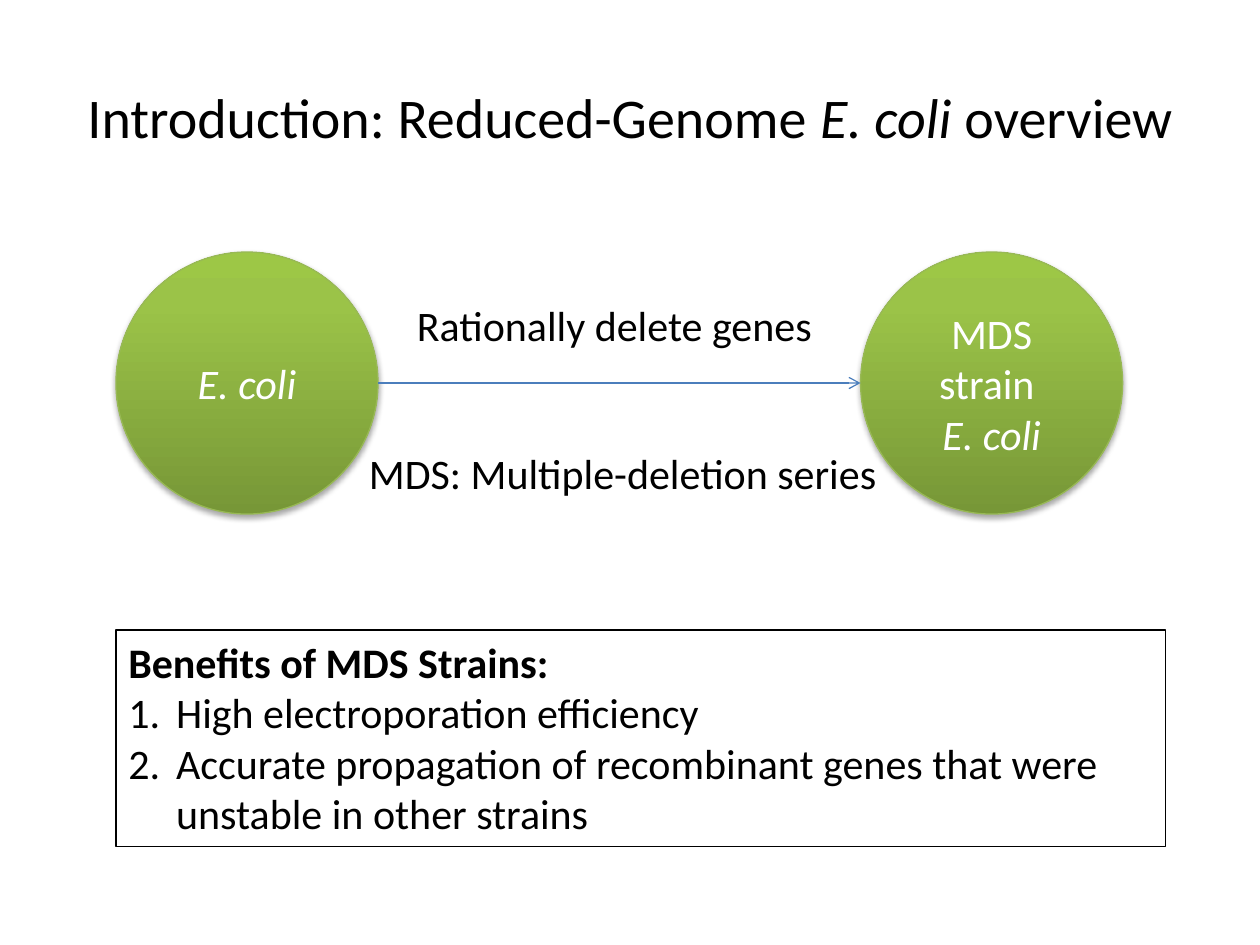
"""Build the overview slide on reduced-genome E. coli."""
from copy import deepcopy

from pptx import Presentation
from pptx.dml.color import RGBColor
from pptx.enum.shapes import MSO_CONNECTOR, MSO_SHAPE
from pptx.enum.text import MSO_ANCHOR, PP_ALIGN
from pptx.oxml import parse_xml
from pptx.oxml.ns import nsdecls, qn
from pptx.util import Inches, Pt

BLACK = RGBColor(0x00, 0x00, 0x00)
WHITE = RGBColor(0xFF, 0xFF, 0xFF)
BLUE = RGBColor(0x4B, 0x7E, 0xBC)
GREEN_LINE = RGBColor(0x98, 0xB9, 0x55)
GREEN_STOPS = [
    (0, RGBColor(0x77, 0x97, 0x37)),
    (0.8, RGBColor(0x9B, 0xC3, 0x48)),
    (1, RGBColor(0x9D, 0xC7, 0x46)),
]
SHADOW = (
    f'<a:outerShdw {nsdecls("a")} blurRad="40000" dist="23000" dir="5400000" rotWithShape="0">'
    '<a:srgbClr val="000000"><a:alpha val="35000"/></a:srgbClr></a:outerShdw>'
)


def write_text(shape, paragraphs, size=24, color=BLACK, align=PP_ALIGN.LEFT, anchor=MSO_ANCHOR.TOP):
    frame = shape.text_frame
    frame.word_wrap = True
    frame.vertical_anchor = anchor
    for index, runs in enumerate(paragraphs):
        paragraph = frame.paragraphs[0] if index == 0 else frame.add_paragraph()
        paragraph.alignment = align
        for text, style in runs:
            run = paragraph.add_run()
            run.text = text
            run.font.name = "Calibri"
            run.font.size = Pt(size)
            run.font.color.rgb = color
            run.font.bold = style == "bold"
            run.font.italic = style == "italic"
    return frame


presentation = Presentation()
presentation.slide_width = Inches(10)
presentation.slide_height = Inches(7.5)
slide = presentation.slides.add_slide(presentation.slide_layouts[6])
shapes = slide.shapes

title = shapes.add_textbox(Inches(0.5), Inches(0.3), Inches(9), Inches(1.25))
title_runs = [("Introduction: Reduced-Genome ", ""), ("E. coli ", "italic"), ("overview", "")]
write_text(title, [title_runs], size=32, align=PP_ALIGN.CENTER, anchor=MSO_ANCHOR.MIDDLE)

species = [("E. coli", "italic")]
for left, paragraphs in [(0.92, [species]), (6.83, [[("MDS strain ", "")], species])]:
    circle = shapes.add_shape(MSO_SHAPE.OVAL, Inches(left), Inches(2), Inches(2.08), Inches(2.08))
    circle.fill.gradient()
    circle.fill.gradient_angle = 90
    stop_list = circle.element.spPr.find(qn("a:gradFill")).find(qn("a:gsLst"))
    stop_list.append(deepcopy(stop_list[-1]))
    for stop, (position, color) in zip(circle.fill.gradient_stops, GREEN_STOPS):
        stop.position = position
        stop.color.rgb = color
    circle.line.color.rgb = GREEN_LINE
    circle.line.width = Pt(0.75)
    circle.shadow.inherit = False
    circle.element.spPr.find(qn("a:effectLst")).append(parse_xml(SHADOW))
    write_text(circle, paragraphs, color=WHITE, align=PP_ALIGN.CENTER, anchor=MSO_ANCHOR.MIDDLE)

arrow = shapes.add_connector(
    MSO_CONNECTOR.STRAIGHT, Inches(3), Inches(3.04), Inches(6.83), Inches(3.04)
)
arrow.line.color.rgb = BLUE
arrow.line.width = Pt(0.75)
arrow.line._get_or_add_ln().append(parse_xml(f'<a:tailEnd {nsdecls("a")} type="arrow"/>'))
arrow.element.spPr.append(parse_xml(f'<a:effectLst {nsdecls("a")}/>'))

for text, left, top, width in [
    ("Rationally delete genes", 3.21, 2.33, 3.42),
    ("MDS: Multiple-deletion series", 2.83, 3.5, 4.33),
]:
    label = shapes.add_textbox(Inches(left), Inches(top), Inches(width), Inches(0.5))
    write_text(label, [[(text, "")]])

benefits = shapes.add_shape(
    MSO_SHAPE.RECTANGLE, Inches(0.92), Inches(5), Inches(8.33), Inches(1.72)
)
benefits.fill.background()
benefits.line.color.rgb = BLACK
benefits.line.width = Pt(0.75)
benefits.shadow.inherit = False
benefits_frame = write_text(benefits, [
    [("Benefits of MDS Strains:", "bold")],
    [("High electroporation efficiency", "")],
    [("Accurate propagation of recombinant genes that were unstable in other strains", "")],
])
for paragraph in benefits_frame.paragraphs[1:]:
    properties = paragraph._p.get_or_add_pPr()
    properties.set("marL", str(Inches(0.38)))
    properties.set("indent", str(-Inches(0.38)))
    properties.append(parse_xml(f'<a:buFont {nsdecls("a")} typeface="+mj-lt"/>'))
    properties.append(parse_xml(f'<a:buAutoNum {nsdecls("a")} type="arabicPeriod"/>'))

presentation.save("out.pptx")
